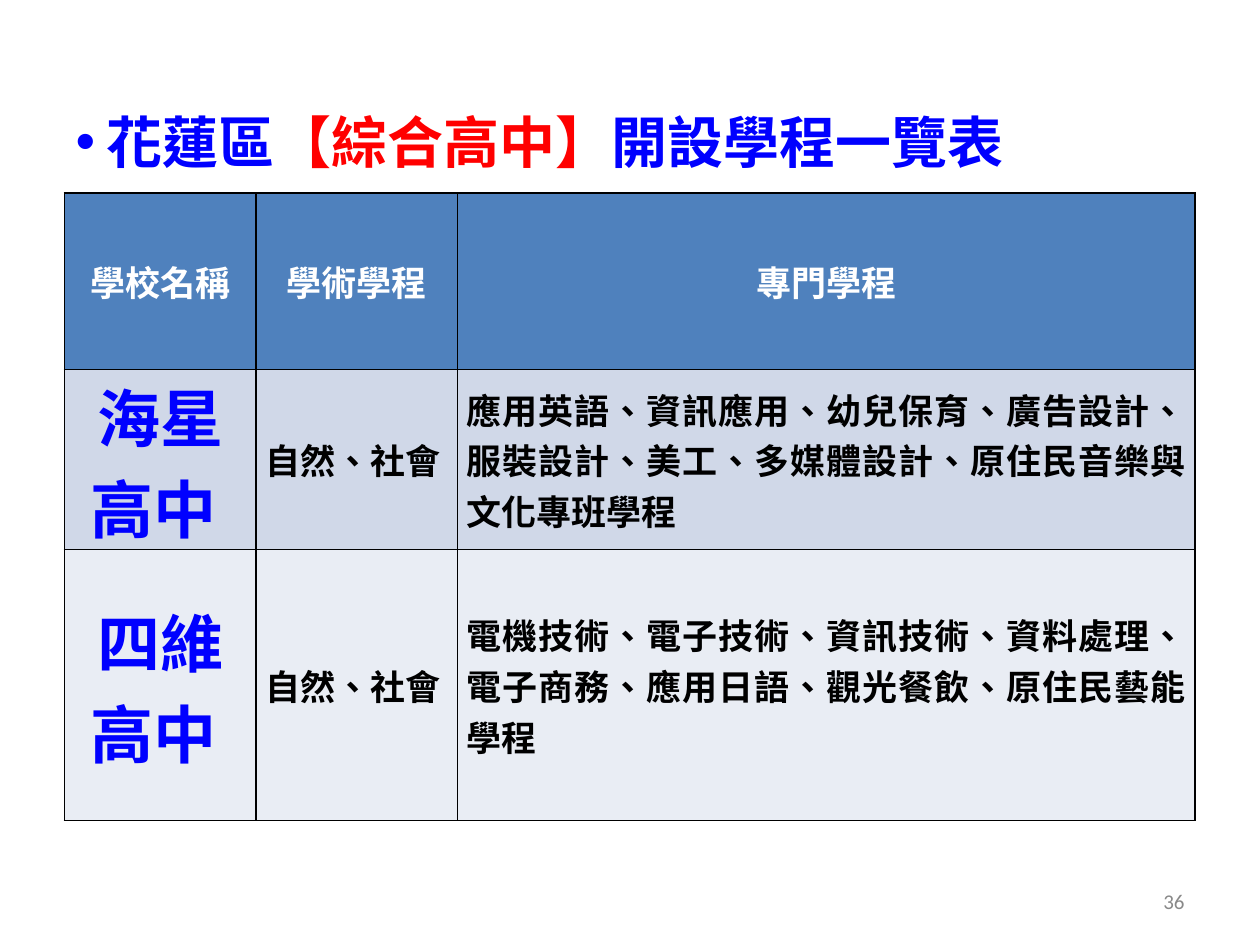
from lxml import etree
from pptx import Presentation
from pptx.dml.color import RGBColor
from pptx.enum.lang import MSO_LANGUAGE_ID
from pptx.enum.text import MSO_ANCHOR, PP_ALIGN
from pptx.oxml.ns import qn
from pptx.util import Cm, Pt

MIDDLE = MSO_ANCHOR.MIDDLE
LEFT, CENTER, RIGHT, JUSTIFY = PP_ALIGN.LEFT, PP_ALIGN.CENTER, PP_ALIGN.RIGHT, PP_ALIGN.JUSTIFY
CHINESE = MSO_LANGUAGE_ID.TRADITIONAL_CHINESE
CJK_FONT = "Noto Sans CJK SC"
BLUE, RED, BLACK, WHITE, GRAY = "0000FF", "FF0000", "000000", "FFFFFF", "898989"

TITLE = [("花蓮區", BLUE), ("【綜合高中】", RED), ("開設學程一覽表", BLUE)]
PAGE_NUMBER = "36"
ROWS = [
    ("學校名稱", "學術學程", "專門學程"),
    ("海星高中 ", "自然、社會",
     "應用英語、資訊應用、幼兒保育、廣告設計、服裝設計、美工、多媒體設計、原住民音樂與文化專班學程"),
    ("四維高中 ", "自然、社會",
     "電機技術、電子技術、資訊技術、資料處理、電子商務、應用日語、觀光餐飲、原住民藝能學程"),
]
COLUMN_WIDTHS = [3.86, 4.06, 14.87]
ROW_HEIGHTS = [3.56, 3.63, 5.46]
ROW_FILLS = ["4F81BD", "D0D8E8", "E9EDF4"]


def color(value):
    return RGBColor.from_string(value)


def format_run(run, size, font_name, font_color, bold=True):
    font = run.font
    font.size, font.name, font.bold = Pt(size), font_name, bold
    font.color.rgb = color(font_color)
    font.language_id = CHINESE
    east_asian = etree.Element(qn("a:ea"), typeface=CJK_FONT)
    run._r.rPr.find(qn("a:latin")).addnext(east_asian)


def place(shape, left, top, width, height):
    shape.left, shape.top = Cm(left), Cm(top)
    shape.width, shape.height = Cm(width), Cm(height)


def add_bullet(paragraph, indent):
    properties = paragraph._p.get_or_add_pPr()
    properties.set("marL", str(Cm(indent)))
    properties.set("indent", str(-Cm(indent)))
    etree.SubElement(properties, qn("a:buFont"), typeface="Arial")
    etree.SubElement(properties, qn("a:buChar"), char="•")


def add_borders(cell):
    properties = cell._tc.get_or_add_tcPr()
    for side in ("lnL", "lnR", "lnT", "lnB"):
        line = etree.SubElement(properties, qn(f"a:{side}"), w=str(Pt(1)))
        fill = etree.SubElement(line, qn("a:solidFill"))
        etree.SubElement(fill, qn("a:srgbClr"), val=BLACK)


def cell_style(row_index, column_index):
    if row_index == 0:
        return CENTER, 20, "Times New Roman", WHITE
    if column_index == 0:
        return CENTER, 36, "Times New Roman", BLUE
    return JUSTIFY, 20, "Arial", BLACK


def add_title(slide):
    title = slide.shapes.title
    place(title, 1.27, 1.73, 22.86, 2.21)
    title.text_frame.vertical_anchor = MIDDLE
    paragraph = title.text_frame.paragraphs[0]
    paragraph.alignment = LEFT
    add_bullet(paragraph, 0.63)
    for text, text_color in TITLE:
        run = paragraph.add_run()
        run.text = text
        format_run(run, 32, CJK_FONT, text_color)


def add_program_table(slide):
    frame = slide.shapes.add_table(len(ROWS), len(COLUMN_WIDTHS), Cm(1.3), Cm(3.89),
                                   Cm(sum(COLUMN_WIDTHS)), Cm(sum(ROW_HEIGHTS)))
    table = frame.table
    for column, width in zip(table.columns, COLUMN_WIDTHS):
        column.width = Cm(width)
    for row_index, texts in enumerate(ROWS):
        table.rows[row_index].height = Cm(ROW_HEIGHTS[row_index])
        for column_index, text in enumerate(texts):
            cell = table.cell(row_index, column_index)
            add_borders(cell)
            cell.fill.solid()
            cell.fill.fore_color.rgb = color(ROW_FILLS[row_index])
            cell.vertical_anchor = MIDDLE
            cell.margin_left = cell.margin_right = Cm(0.19)
            cell.margin_top = cell.margin_bottom = 0
            cell.text_frame.text = text
            paragraph = cell.text_frame.paragraphs[0]
            alignment, *run_style = cell_style(row_index, column_index)
            paragraph.alignment = alignment
            format_run(paragraph.runs[0], *run_style)


def add_page_number(slide):
    box = slide.shapes.add_textbox(Cm(18.2), Cm(17.65), Cm(5.93), Cm(1.02))
    box.text_frame.word_wrap = True
    box.text_frame.vertical_anchor = MIDDLE
    box.text_frame.text = PAGE_NUMBER
    paragraph = box.text_frame.paragraphs[0]
    paragraph.alignment = RIGHT
    format_run(paragraph.runs[0], 12, "Calibri", GRAY, bold=False)


def main():
    presentation = Presentation()
    presentation.slide_width, presentation.slide_height = Cm(25.4), Cm(19.05)
    slide = presentation.slides.add_slide(presentation.slide_layouts[5])
    add_title(slide)
    add_page_number(slide)
    add_program_table(slide)
    presentation.save("out.pptx")


if __name__ == "__main__":
    main()
